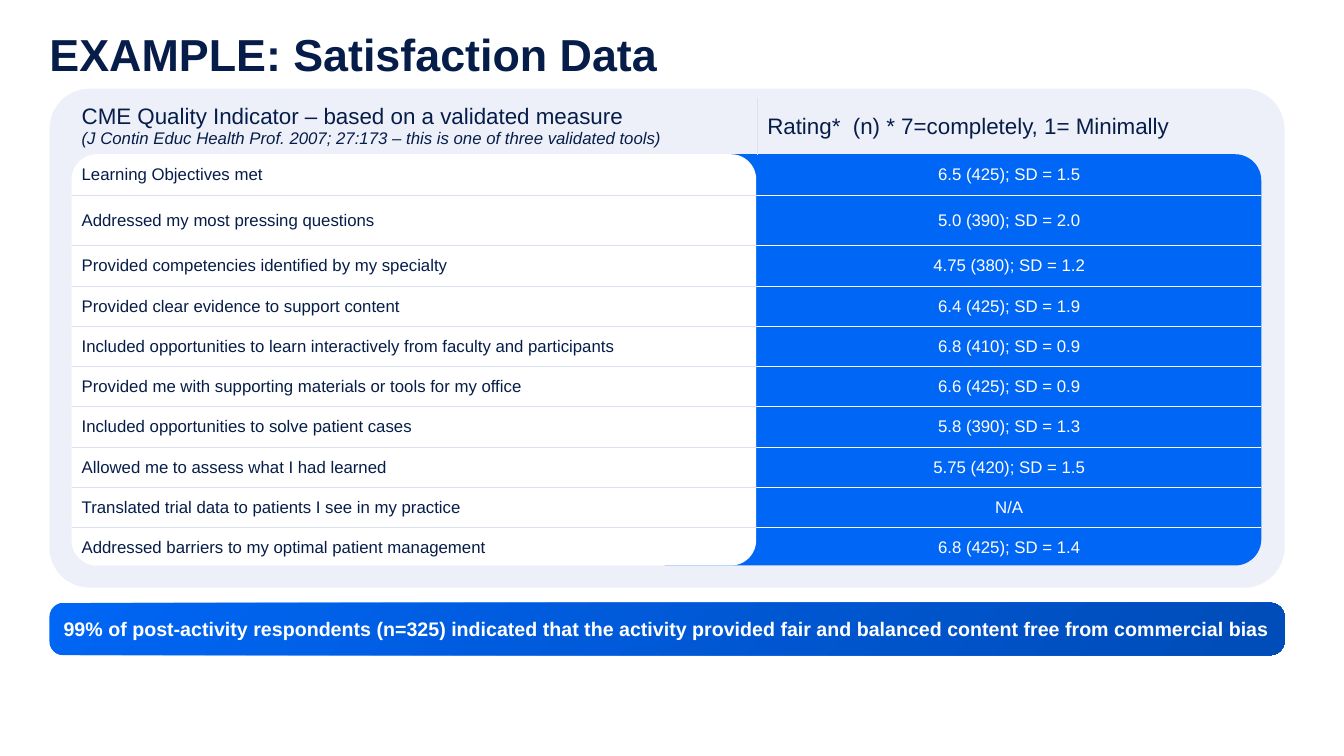
from dataclasses import dataclass

from lxml.etree import SubElement
from pptx import Presentation
from pptx.dml.color import RGBColor
from pptx.enum.shapes import MSO_SHAPE
from pptx.enum.text import MSO_ANCHOR, PP_ALIGN
from pptx.oxml.ns import qn
from pptx.util import Inches, Pt


@dataclass(frozen=True)
class Theme:
    font: str = "Arial"
    navy: str = "071D49"
    blue: str = "0066F5"
    deep_blue: str = "004CB8"
    panel: str = "EDF0F9"
    rule: str = "DBE1F3"
    white: str = "FFFFFF"
    title_size: int = 32
    header_size: int = 16
    banner_size: int = 14
    body_size: int = 12
    rule_width: float = 0.75


THEME = Theme()

RATINGS = [
    ("Learning Objectives met", "6.5 (425); SD = 1.5"),
    ("Addressed my most pressing questions", "5.0 (390); SD = 2.0"),
    ("Provided competencies identified by my specialty", "4.75 (380); SD = 1.2"),
    ("Provided clear evidence to support content", "6.4 (425); SD = 1.9"),
    ("Included opportunities to learn interactively from faculty and participants",
     "6.8 (410); SD = 0.9"),
    ("Provided me with supporting materials or tools for my office", "6.6 (425); SD = 0.9"),
    ("Included opportunities to solve patient cases", "5.8 (390); SD = 1.3"),
    ("Allowed me to assess what I had learned", "5.75 (420); SD = 1.5"),
    ("Translated trial data to patients I see in my practice", "N/A"),
    ("Addressed barriers to my optimal patient management", "6.8 (425); SD = 1.4"),
]
HEADER_HEIGHT = 0.53
ROW_HEIGHTS = [0.4, 0.5] + [0.4] * 8
COLUMN_WIDTHS = [6.8, 5]


def write(para, text, size=THEME.body_size, color=THEME.navy, bold=False, italic=False,
          align=PP_ALIGN.LEFT):
    para.alignment = align
    span = para.add_run()
    span.text = text
    font = span.font
    font.name, font.size, font.bold, font.italic = THEME.font, Pt(size), bold, italic
    font.color.rgb = RGBColor.from_string(color)


def add_rounded(page, left, top, width, height, corner, color):
    """Add a rounded rectangle whose corner radius is given in inches."""
    shape = page.shapes.add_shape(MSO_SHAPE.ROUNDED_RECTANGLE, Inches(left), Inches(top),
                                  Inches(width), Inches(height))
    shape.adjustments[0] = corner / min(width, height)
    shape.shadow.inherit = False
    shape.fill.solid()
    shape.fill.fore_color.rgb = RGBColor.from_string(color)
    shape.line.fill.background()
    return shape


def set_borders(cell, **colors):
    """Draw the sides named left, right, top or bottom; clear the others."""
    properties = cell._tc.get_or_add_tcPr()
    sides = {"left": "a:lnL", "right": "a:lnR", "top": "a:lnT", "bottom": "a:lnB"}
    for position, (side, tag) in enumerate(sides.items()):
        line = SubElement(properties, qn(tag), w=str(Pt(THEME.rule_width)))
        properties.insert(position, line)
        if side in colors:
            fill = SubElement(line, qn("a:solidFill"))
            SubElement(fill, qn("a:srgbClr"), val=colors[side])
        else:
            SubElement(line, qn("a:noFill"))


def add_title(page, left, top, width, height):
    box = page.shapes.add_textbox(Inches(left), Inches(top), Inches(width), Inches(height))
    frame = box.text_frame
    frame.word_wrap = True
    frame.margin_left = frame.margin_right = frame.margin_top = frame.margin_bottom = 0
    para = frame.paragraphs[0]
    para.line_spacing = 0.85
    write(para, "EXAMPLE: Satisfaction Data", size=THEME.title_size, bold=True)


def fill_header(table):
    indicator, rating = table.cell(0, 0), table.cell(0, 1)
    frame = indicator.text_frame
    write(frame.paragraphs[0], "CME Quality Indicator – based on a validated measure",
          size=THEME.header_size)
    write(frame.add_paragraph(),
          "(J Contin Educ Health Prof. 2007; 27:173 – this is one of three validated tools)",
          italic=True)
    write(rating.text_frame.paragraphs[0], "Rating*  (n) * 7=completely, 1= Minimally",
          size=THEME.header_size)
    set_borders(indicator, right=THEME.rule)
    set_borders(rating, left=THEME.rule)


def fill_ratings(table):
    styles = [(THEME.navy, THEME.rule, PP_ALIGN.LEFT),
              (THEME.white, THEME.white, PP_ALIGN.CENTER)]
    for row, texts in enumerate(RATINGS, start=1):
        for column, (text, (color, rule, align)) in enumerate(zip(texts, styles)):
            cell = table.cell(row, column)
            write(cell.text_frame.paragraphs[0], text, color=color, align=align)
            borders = {}
            if row > 1:
                borders["top"] = rule
            if row < len(RATINGS):
                borders["bottom"] = rule
            set_borders(cell, **borders)


def add_ratings_panel(page, left, top, width, height):
    """Place the pale panel, the two column cards and the table over them."""
    add_rounded(page, left, top, width, height, 0.4, THEME.panel)
    card_left, card_top, card_height = left + 0.22, top + 0.65, 4.08
    add_rounded(page, left + 5.88, card_top, 6.14, card_height, 0.26, THEME.blue)
    add_rounded(page, card_left, card_top, 6.79, card_height, 0.25, THEME.white)

    heights = [HEADER_HEIGHT] + ROW_HEIGHTS
    table = page.shapes.add_table(
        len(heights), len(COLUMN_WIDTHS), Inches(card_left), Inches(top + 0.09),
        Inches(sum(COLUMN_WIDTHS)), Inches(sum(heights))).table
    table.first_row = table.horz_banding = False
    for column, column_width in zip(table.columns, COLUMN_WIDTHS):
        column.width = Inches(column_width)
    for row, row_height in zip(table.rows, heights):
        row.height = Inches(row_height)
    for cell in table.iter_cells():
        cell.fill.background()
        cell.vertical_anchor = MSO_ANCHOR.MIDDLE
    fill_header(table)
    fill_ratings(table)


def add_banner(page, left, top, width, height):
    banner = add_rounded(page, left, top, width, height, 0.14, THEME.blue)
    banner.fill.gradient()
    banner.fill.gradient_angle = 315
    for stop, color in zip(banner.fill.gradient_stops, (THEME.blue, THEME.deep_blue)):
        stop.color.rgb = RGBColor.from_string(color)
    frame = banner.text_frame
    frame.word_wrap = True
    frame.vertical_anchor = MSO_ANCHOR.MIDDLE
    frame.margin_left = frame.margin_right = Inches(0.1)
    frame.margin_top = frame.margin_bottom = Inches(0.1)
    write(frame.paragraphs[0],
          "99% of post-activity respondents (n=325) indicated that the activity provided "
          "fair and balanced content free from commercial bias",
          size=THEME.banner_size, color=THEME.white, bold=True, align=PP_ALIGN.CENTER)


def main():
    deck = Presentation()
    deck.slide_width, deck.slide_height = Inches(13.33), Inches(7.5)
    page = deck.slides.add_slide(deck.slide_layouts[6])
    left, width = 0.49, 12.25
    add_title(page, left, 0.35, width, 0.5)
    add_ratings_panel(page, left, 0.88, width, 4.95)
    add_banner(page, left, 5.98, width, 0.52)
    deck.save("out.pptx")


if __name__ == "__main__":
    main()
